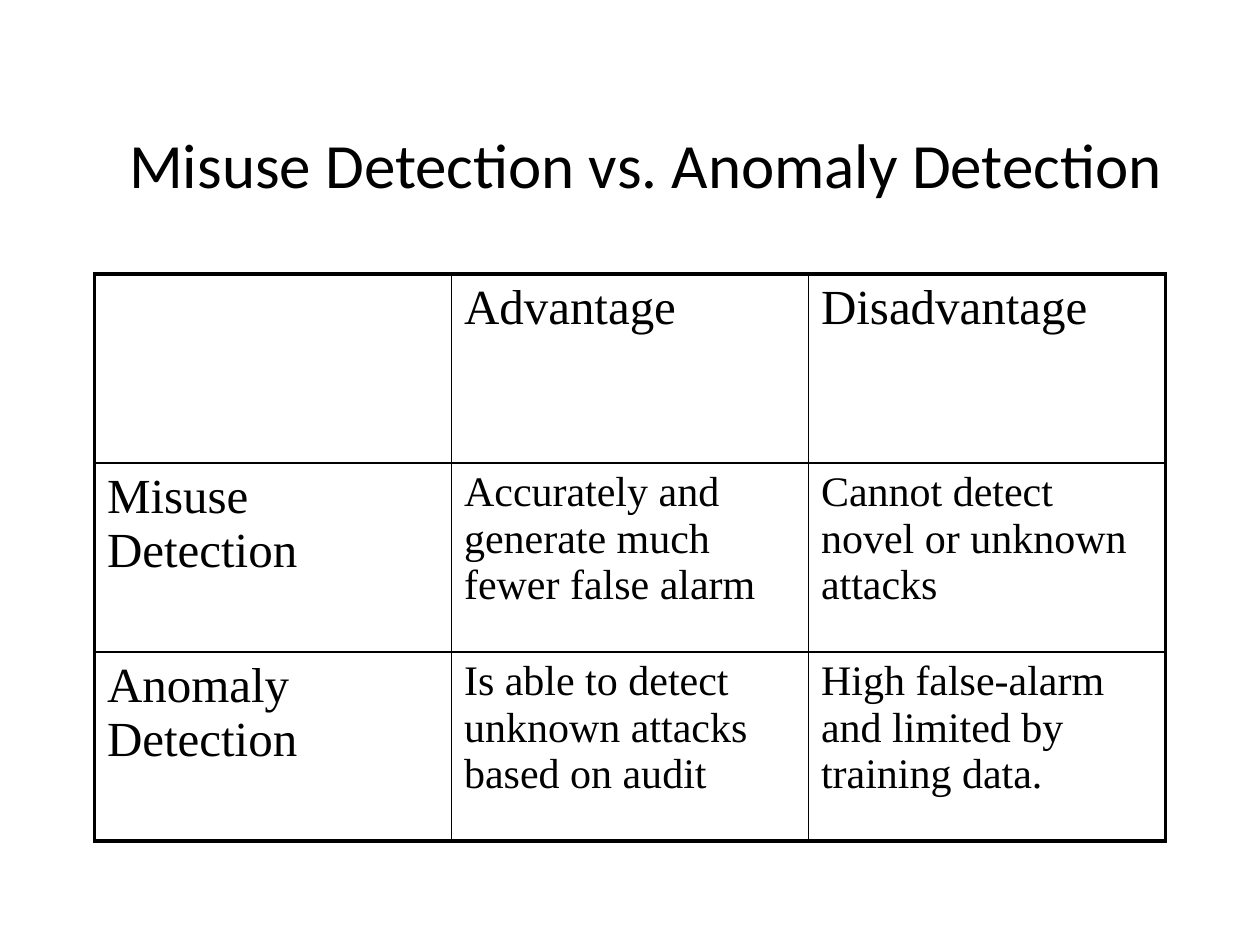
from lxml.etree import SubElement
from pptx import Presentation
from pptx.dml.color import RGBColor
from pptx.enum.text import MSO_ANCHOR as Anchor, PP_ALIGN as Align
from pptx.oxml.ns import qn
from pptx.util import Inches, Pt

COLORS = {"ink": "000000", "paper": "FFFFFF"}
WIDTH, HEIGHT = Inches(10), Inches(7.5)
TITLE = "Misuse Detection vs. Anomaly Detection"
ROWS = [
    ["", "Advantage", "Disadvantage"],
    ["Misuse Detection", "Accurately and generate much fewer false alarm",
     "Cannot detect novel or unknown attacks"],
    ["Anomaly Detection", "Is able to detect unknown attacks based on audit",
     "High false-alarm and limited by training data."],
]
FORMATS = {
    "title": {"name": "Calibri", "size": Pt(36)},
    "heading": {"name": "Times New Roman", "size": Pt(28)},
    "body": {"name": "Times New Roman", "size": Pt(24)},
}
OUTER, INNER = Pt(2.25), Pt(1)


def share(left, top, width, height):
    return [round(part) for part in
            (left * WIDTH, top * HEIGHT, width * WIDTH, height * HEIGHT)]


def write(para, text, style):
    span = para.add_run()
    span.text = text
    for name, value in FORMATS[style].items():
        setattr(span.font, name, value)
    span.font.color.rgb = RGBColor.from_string(COLORS["ink"])


def add_title(page, text):
    box = page.shapes.add_textbox(*share(0.05, 0.09, 0.925, 0.165))
    frame = box.text_frame
    for name, value in {"word_wrap": True, "vertical_anchor": Anchor.MIDDLE}.items():
        setattr(frame, name, value)
    para = frame.paragraphs[0]
    para.alignment = Align.CENTER
    write(para, text, "title")


def add_border(cell, side, width):
    line = SubElement(cell._tc.get_or_add_tcPr(), qn(f"a:ln{side}"), w=str(width))
    fill = SubElement(line, qn("a:solidFill"))
    SubElement(fill, qn("a:srgbClr"), val=COLORS["ink"])


def space_before(para, percent):
    spacing = SubElement(para._p.get_or_add_pPr(), qn("a:spcBef"))
    SubElement(spacing, qn("a:spcPct"), val=str(percent * 1000))


def fill_cell(cell, text, style, edges):
    for side, is_outer in edges.items():
        add_border(cell, side, OUTER if is_outer else INNER)
    cell.fill.background()
    if text:
        para = cell.text_frame.paragraphs[0]
        space_before(para, 20)
        write(para, text, style)


def add_grid(page, rows):
    last_row, last_column = len(rows) - 1, len(rows[0]) - 1
    grid = page.shapes.add_table(
        len(rows), len(rows[0]), *share(0.075, 0.29, 0.85, 0.6)).table
    for name in ("first_row", "horz_banding"):
        setattr(grid, name, False)
    for row, texts in enumerate(rows):
        for column, text in enumerate(texts):
            edges = {"L": column == 0, "R": column == last_column,
                     "T": row == 0, "B": row == last_row}
            style = "body" if row and column else "heading"
            fill_cell(grid.cell(row, column), text, style, edges)


def main():
    deck = Presentation()
    deck.slide_width, deck.slide_height = WIDTH, HEIGHT
    page = deck.slides.add_slide(deck.slide_layouts[6])
    background = page.background.fill
    background.solid()
    background.fore_color.rgb = RGBColor.from_string(COLORS["paper"])
    add_title(page, TITLE)
    add_grid(page, ROWS)
    deck.save("out.pptx")


if __name__ == "__main__":
    main()
